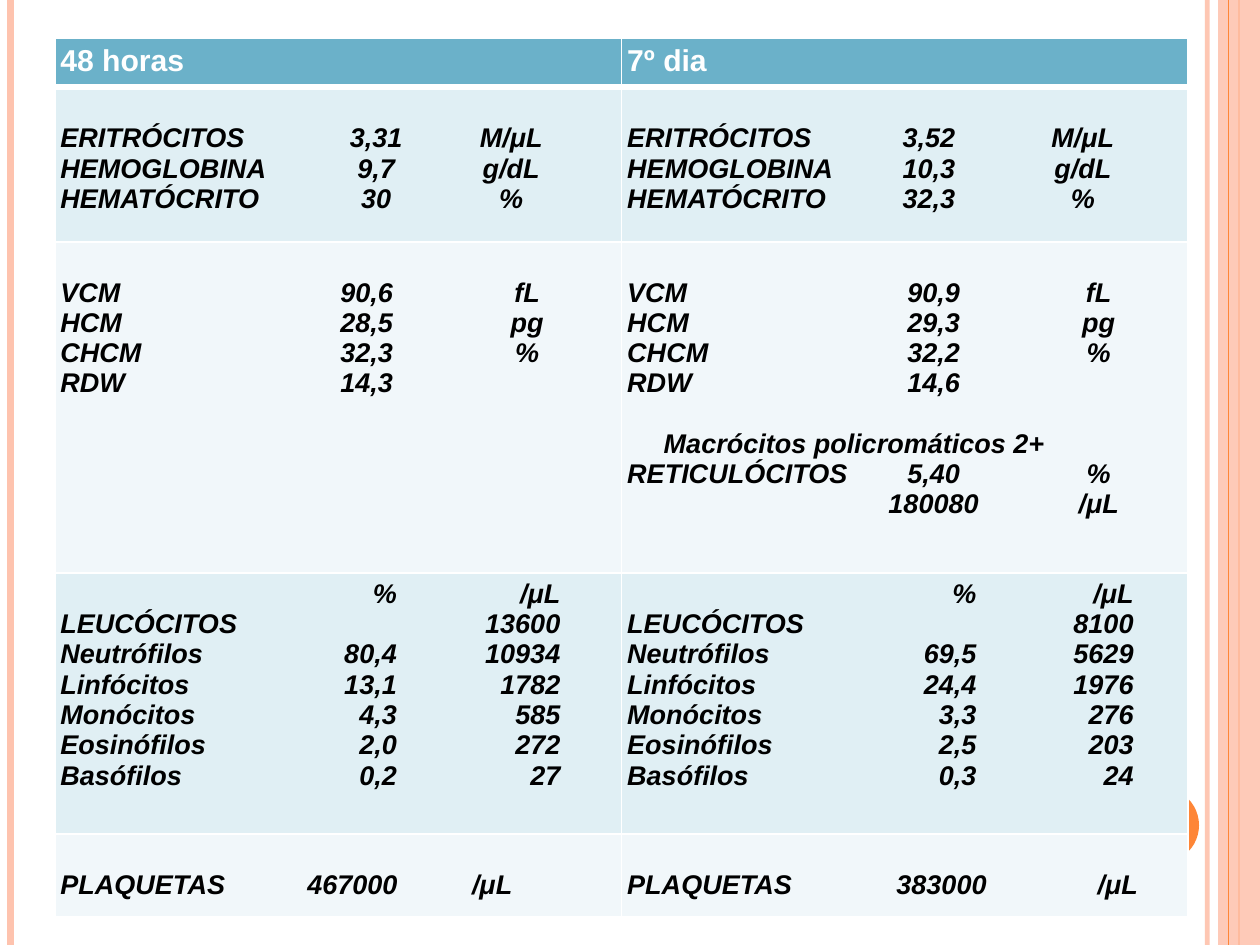
from lxml.etree import SubElement, Element
from pptx import Presentation
from pptx.dml.color import RGBColor
from pptx.enum.shapes import MSO_CONNECTOR as Connector, MSO_SHAPE as Shape
from pptx.oxml.ns import qn
from pptx.util import Pt

WHITE = RGBColor(0xFF, 0xFF, 0xFF)
BLACK = RGBColor(0, 0, 0)
PEACH = RGBColor(0xFE, 0xC3, 0xAE)
ORANGE = RGBColor(0xFE, 0x86, 0x37)
TEAL = RGBColor(0x6B, 0xB1, 0xC9)
MIST = RGBColor(0xE0, 0xEF, 0xF4)
PALE = RGBColor(0xF1, 0xF7, 0xFA)

PAGE_WIDTH, PAGE_HEIGHT = 793.7, 595.28
INSET = 3.6
LINE_HEIGHT = 19
THIN, THICK = 1.42, 4.27

HEADINGS = ["48 horas", "7º dia"]
ROW_HEIGHTS = [31, 97.2, 208.8, 164.2, 52.6]
SECTIONS = [
    dict(fill=MIST, lead=LINE_HEIGHT, align="ctr", stops=[(199, 284), (190, 287)], lines=[
        ["ERITRÓCITOS\t3,31\tM/μL", "HEMOGLOBINA\t9,7\tg/dL", "HEMATÓCRITO\t30\t%"],
        ["ERITRÓCITOS\t3,52\tM/μL", "HEMOGLOBINA\t10,3\tg/dL", "HEMATÓCRITO\t32,3\t%"]]),
    dict(fill=PALE, lead=LINE_HEIGHT, align="ctr", stops=[(193, 294), (193, 297)], lines=[
        ["VCM\t90,6\tfL", "HCM\t28,5\tpg", "CHCM\t32,3\t%", "RDW\t14,3"],
        ["VCM\t90,9\tfL", "HCM\t29,3\tpg", "CHCM\t32,2\t%", "RDW\t14,6",
         "Macrócitos policromáticos 2+", "RETICULÓCITOS\t5,40\t%", "\t180080\t/μL"]]),
    dict(fill=MIST, lead=0, align="r", stops=[(212, 315), (220, 319)], lines=[
        ["\t%\t/μL", "LEUCÓCITOS\t\t13600", "Neutrófilos\t80,4\t10934", "Linfócitos\t13,1\t1782",
         "Monócitos\t4,3\t585", "Eosinófilos\t2,0\t272", "Basófilos\t0,2\t27"],
        ["\t%\t/μL", "LEUCÓCITOS\t\t8100", "Neutrófilos\t69,5\t5629", "Linfócitos\t24,4\t1976",
         "Monócitos\t3,3\t276", "Eosinófilos\t2,5\t203", "Basófilos\t0,3\t24"]]),
    dict(fill=PALE, lead=LINE_HEIGHT, align="ctr", stops=[(184, 272), (198, 309)], lines=[
        ["PLAQUETAS\t467000\t/μL"], ["PLAQUETAS\t383000\t/μL"]]),
]


def set_opacity(color_parent, percent):
    """Make the solid colour inside an element partly transparent."""
    color = next(color_parent.iter(qn("a:srgbClr")))
    SubElement(color, qn("a:alpha"), val=str(percent * 1000))


def add_stripe(page, x, height, color, width, opacity=100):
    """Draw one vertical line down the page."""
    line = page.shapes.add_connector(Connector.STRAIGHT, Pt(x), Pt(0), Pt(x), Pt(height))
    line.line.color.rgb = color
    line.line.width = Pt(width)
    SubElement(line._element.spPr, qn("a:effectLst"))
    if opacity < 100:
        set_opacity(line._element.spPr, opacity)


def add_block(page, kind, left, top, width, height, color):
    """Add a plain filled shape without outline or shadow."""
    block = page.shapes.add_shape(kind, Pt(left), Pt(top), Pt(width), Pt(height))
    block.shadow.inherit = False
    block.fill.solid()
    block.fill.fore_color.rgb = color
    block.line.fill.background()
    return block


def draw_frame(page, width, height):
    """Draw the side stripes, the right band and the circle."""
    add_stripe(page, width - 33.2, height, PEACH, 3, 93)
    add_stripe(page, 6.6, height, PEACH, 4.5)
    add_stripe(page, width - 13.2, height, ORANGE, 1.5)
    band = add_block(page, Shape.RECTANGLE, width - 26.3, 0, 26.3, height, PEACH)
    set_opacity(band._element.spPr, 87)
    add_stripe(page, width - 19.7, height, ORANGE, 0.75)
    add_block(page, Shape.OVAL, width - 85.9, height - 99.2, 47.5, 47.5, ORANGE)


def set_borders(cell, top, bottom):
    """Give a cell white borders, with their own top and bottom widths."""
    properties = cell._tc.get_or_add_tcPr()
    sides = [("L", THIN), ("R", THIN), ("T", top), ("B", bottom)]
    for index, (side, width) in enumerate(sides):
        border = Element(qn(f"a:ln{side}"), w=str(Pt(width)))
        solid = SubElement(border, qn("a:solidFill"))
        SubElement(solid, qn("a:srgbClr"), val=str(WHITE))
        properties.insert(index, border)


def format_cell(cell, fill, lead=0, top=THIN, bottom=THIN):
    """Set the fill, insets and borders of a cell."""
    cell.fill.solid()
    cell.fill.fore_color.rgb = fill
    cell.margin_left = cell.margin_right = cell.margin_bottom = Pt(INSET)
    cell.margin_top = Pt(INSET + lead)
    set_borders(cell, top, bottom)


def write_lines(cell, lines, size, color, italic=False, stops=(), align="l"):
    """Write one paragraph per line, with tab stops for its values."""
    cell.text_frame.text = "\n".join(lines)
    for index, para in enumerate(cell.text_frame.paragraphs):
        properties = para._p.get_or_add_pPr()
        if "\t" in lines[index]:
            tabs = SubElement(properties, qn("a:tabLst"))
            for stop in stops:
                SubElement(tabs, qn("a:tab"), pos=str(Pt(stop)), algn=align)
        elif index:
            para.space_before = Pt(LINE_HEIGHT)
            properties.set("marL", str(Pt(23)))
        para.font.name = "Arial"
        para.font.size = Pt(size)
        para.font.bold = True
        para.font.italic = italic
        para.font.color.rgb = color


def draw_results(page, left, top, width):
    """Build the table that compares both blood counts."""
    frame = page.shapes.add_table(len(ROW_HEIGHTS), len(HEADINGS), Pt(left), Pt(top),
                                  Pt(width), Pt(sum(ROW_HEIGHTS)))
    table = frame.table
    for row, height in zip(table.rows, ROW_HEIGHTS):
        row.height = Pt(height)
    for column, heading in enumerate(HEADINGS):
        table.columns[column].width = Pt(width / len(HEADINGS))
        cell = table.cell(0, column)
        format_cell(cell, TEAL, bottom=THICK)
        write_lines(cell, [heading], 19, WHITE)
        for number, section in enumerate(SECTIONS, 1):
            cell = table.cell(number, column)
            format_cell(cell, section["fill"], section["lead"], THICK if number == 1 else THIN)
            write_lines(cell, section["lines"][column], 17, BLACK, True,
                        section["stops"][column], section["align"])


def main():
    """Create the deck with its single page."""
    deck = Presentation()
    deck.slide_width, deck.slide_height = Pt(PAGE_WIDTH), Pt(PAGE_HEIGHT)
    page = deck.slides.add_slide(deck.slide_layouts[6])
    draw_frame(page, PAGE_WIDTH, PAGE_HEIGHT)
    draw_results(page, 34.4, 24, 714.2)
    deck.save("out.pptx")


if __name__ == "__main__":
    main()
